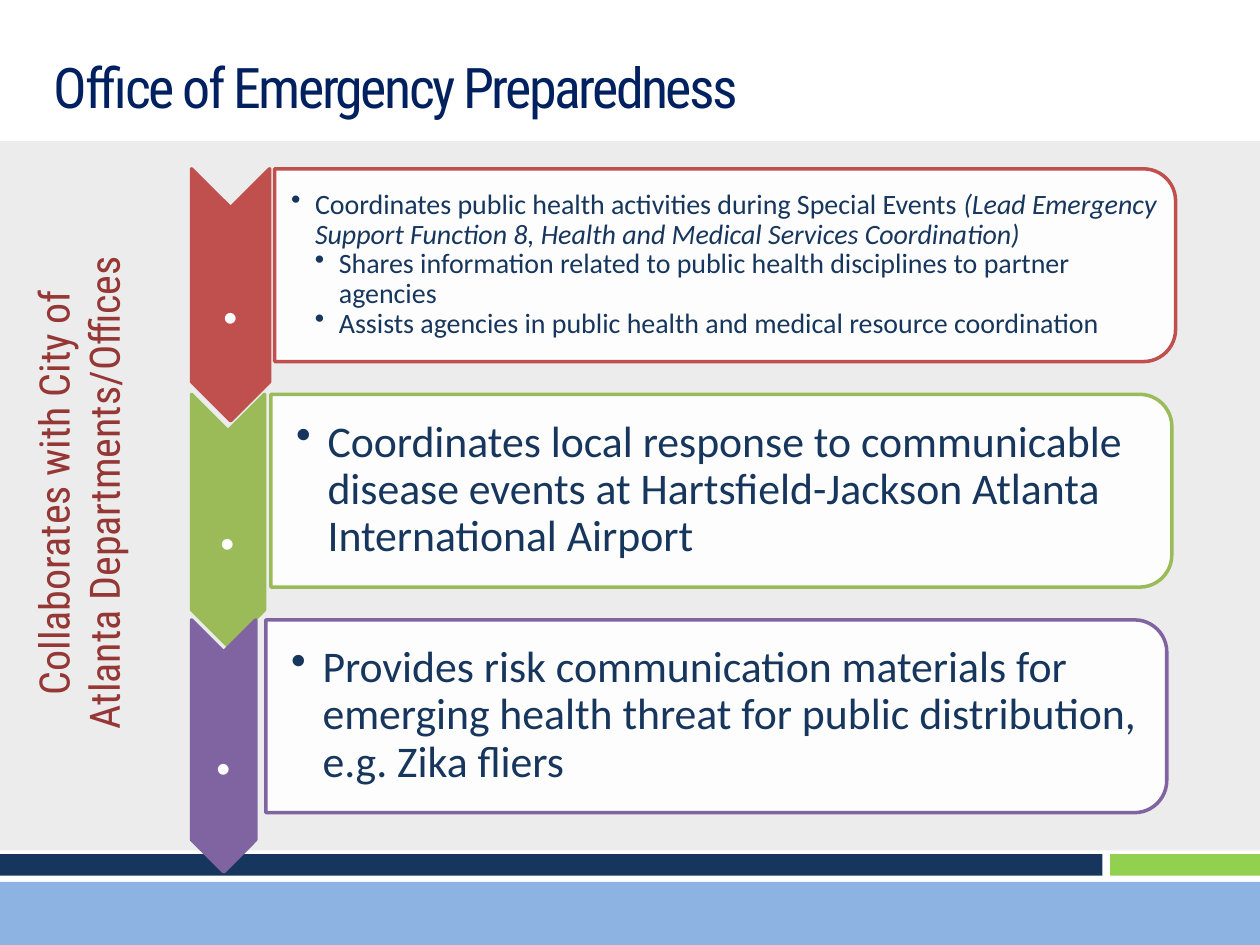
from lxml import etree
from pptx import Presentation
from pptx.dml.color import RGBColor
from pptx.enum import shapes, text
from pptx.oxml.ns import qn
from pptx.util import Inches, Pt

WHITE = RGBColor(0xFF, 0xFF, 0xFF)
GREY = RGBColor(0xEC, 0xEC, 0xEC)
NAVY = RGBColor(0x17, 0x36, 0x5D)
TITLE_BLUE = RGBColor(0x00, 0x20, 0x60)
LIGHT_BLUE = RGBColor(0x8D, 0xB3, 0xE2)
LIME = RGBColor(0x92, 0xD0, 0x50)
RED = RGBColor(0xC0, 0x50, 0x4D)
GREEN = RGBColor(0x9B, 0xBB, 0x59)
PURPLE = RGBColor(0x80, 0x64, 0xA2)
DARK_RED = RGBColor(0x95, 0x37, 0x35)

BODY_FONT = "Calibri"
HEAD_FONT = "Roboto Condensed"
SHAPE = shapes.MSO_SHAPE
MIDDLE = text.MSO_ANCHOR.MIDDLE

# Row layout, in inches
ROW_TOP, ROW_STEP = 1.34, 1.79
CHEVRON_LEFT, CHEVRON_LENGTH = 1.52, 2
PANEL_W, PANEL_H = 7.15, 1.53

# Colour, chevron width, panel left, text size, text inset, bullet indent,
# line spacing, paragraphs as (level, [(text, italic), ...])
ROWS = [
    (RED, 0.62, 2.18, 16, 0.12, 0.19, Pt(17), [
        (1, [("Coordinates public health activities during Special Events ", False),
             ("(Lead Emergency Support Function 8, Health and Medical Services "
              "Coordination)", True)]),
        (2, [("Shares information related to public health disciplines to partner "
              "agencies", False)]),
        (2, [("Assists agencies in public health and medical resource coordination",
              False)]),
    ]),
    (GREEN, 0.58, 2.15, 25, 0.19, 0.25, 0.9, [
        (1, [("Coordinates local response to communicable disease events at "
              "Hartsfield-Jackson Atlanta International Airport", False)]),
    ]),
    (PURPLE, 0.51, 2.11, 25, 0.19, 0.25, 0.9, [
        (1, [("Provides risk communication materials for emerging health threat "
              "for public distribution, e.g. Zika fliers", False)]),
    ]),
]


def add_block(s, kind, x, y, w, h, fill, line=None):
    sp = s.shapes.add_shape(kind, Inches(x), Inches(y), Inches(w), Inches(h))
    sp.shadow.inherit = False
    sp.fill.solid()
    sp.fill.fore_color.rgb = fill
    if line is None:
        sp.line.fill.background()
    else:
        sp.line.color.rgb = line
        sp.line.width = Pt(2)
    return sp


def add_turned(s, kind, x, y, w, h, fill, line):
    """Add a shape turned by 90 degrees that covers the box x, y, w, h."""
    sp = add_block(s, kind, x + (w - h) / 2, y + (h - w) / 2, h, w, fill, line)
    sp.rotation = 90
    return sp


def add_text_box(s, x, y, w, h, insets, anchor=text.MSO_ANCHOR.TOP):
    tf = s.shapes.add_textbox(Inches(x), Inches(y), Inches(w), Inches(h)).text_frame
    tf.word_wrap = True
    tf.vertical_anchor = anchor
    tf.margin_left, tf.margin_top, tf.margin_right, tf.margin_bottom = map(Inches, insets)
    return tf


def add_run(p, words, size, font, color, italic=False):
    r = p.add_run()
    r.text = words
    r.font.size = Pt(size)
    r.font.name = font
    r.font.color.rgb = color
    r.font.italic = italic
    return r


def set_bullet(p, level, indent):
    p.level = level
    pPr = p._p.get_or_add_pPr()
    pPr.set("marL", str(Inches(indent * level)))
    pPr.set("indent", str(-Inches(indent)))
    etree.SubElement(pPr, qn("a:buChar")).set("char", "•")


def add_row(s, top, color, width, panel_left, size, inset, indent, spacing, paragraphs):
    # Chevron with its dot
    add_turned(s, SHAPE.CHEVRON, CHEVRON_LEFT, top, width, CHEVRON_LENGTH, color, color)
    tf = add_text_box(s, CHEVRON_LEFT, top + width / 2, width, CHEVRON_LENGTH - width,
                      [0.04] * 4, MIDDLE)
    p = tf.paragraphs[0]
    p.alignment = text.PP_ALIGN.CENTER
    p.line_spacing = 0.9
    add_run(p, ".", 51, BODY_FONT, WHITE)

    # Panel, slightly see-through
    panel = add_turned(s, SHAPE.ROUND_2_SAME_RECTANGLE, panel_left, top,
                       PANEL_W, PANEL_H, WHITE, color)
    rgb = panel.fill._xPr.find(qn("a:solidFill"))[0]
    etree.SubElement(rgb, qn("a:alpha")).set("val", "90000")

    # Bulleted text
    tf = add_text_box(s, panel_left + 0.01, top + 0.07, 7.07, 1.38,
                      (inset, 0.02, 0.02, 0.02), MIDDLE)
    for i, (level, runs) in enumerate(paragraphs):
        p = tf.add_paragraph() if i else tf.paragraphs[0]
        set_bullet(p, level, indent)
        p.line_spacing = spacing
        for words, italic in runs:
            add_run(p, words, size, BODY_FONT, NAVY, italic)


def add_title(s):
    tf = add_text_box(s, 0.33, 0.25, 8.09, 0.7, (0.1, 0, 0.1, 0), text.MSO_ANCHOR.BOTTOM)
    r = add_run(tf.paragraphs[0], "Office of Emergency Preparedness", 32,
                HEAD_FONT, TITLE_BLUE)
    r._r.get_or_add_rPr().set("spc", "-150")


def add_side_label(s):
    tf = add_text_box(s, 0.17, 1.73, 1.23, 4.36, (0.1, 0.05, 0.1, 0.05))
    tf._txBody.bodyPr.set("vert", "vert270")
    p = tf.paragraphs[0]
    p.alignment = text.PP_ALIGN.CENTER
    add_run(p, "Collaborates with City of Atlanta Departments/Offices", 24,
            HEAD_FONT, DARK_RED)


def main():
    prs = Presentation()
    prs.slide_width, prs.slide_height = Inches(10), Inches(7.5)
    s = prs.slides.add_slide(prs.slide_layouts[6])

    # Footer bands and grey content area
    for x, y, w, h, fill in [(0, 6.78, 8.75, 0.17, NAVY), (0, 7, 10, 0.5, LIGHT_BLUE),
                             (8.81, 6.78, 1.19, 0.17, LIME), (0, 1.12, 10, 5.63, GREY)]:
        add_block(s, SHAPE.RECTANGLE, x, y, w, h, fill)

    add_title(s)
    for i, row in enumerate(ROWS):
        add_row(s, ROW_TOP + i * ROW_STEP, *row)
    add_side_label(s)

    prs.save("out.pptx")


if __name__ == "__main__":
    main()
